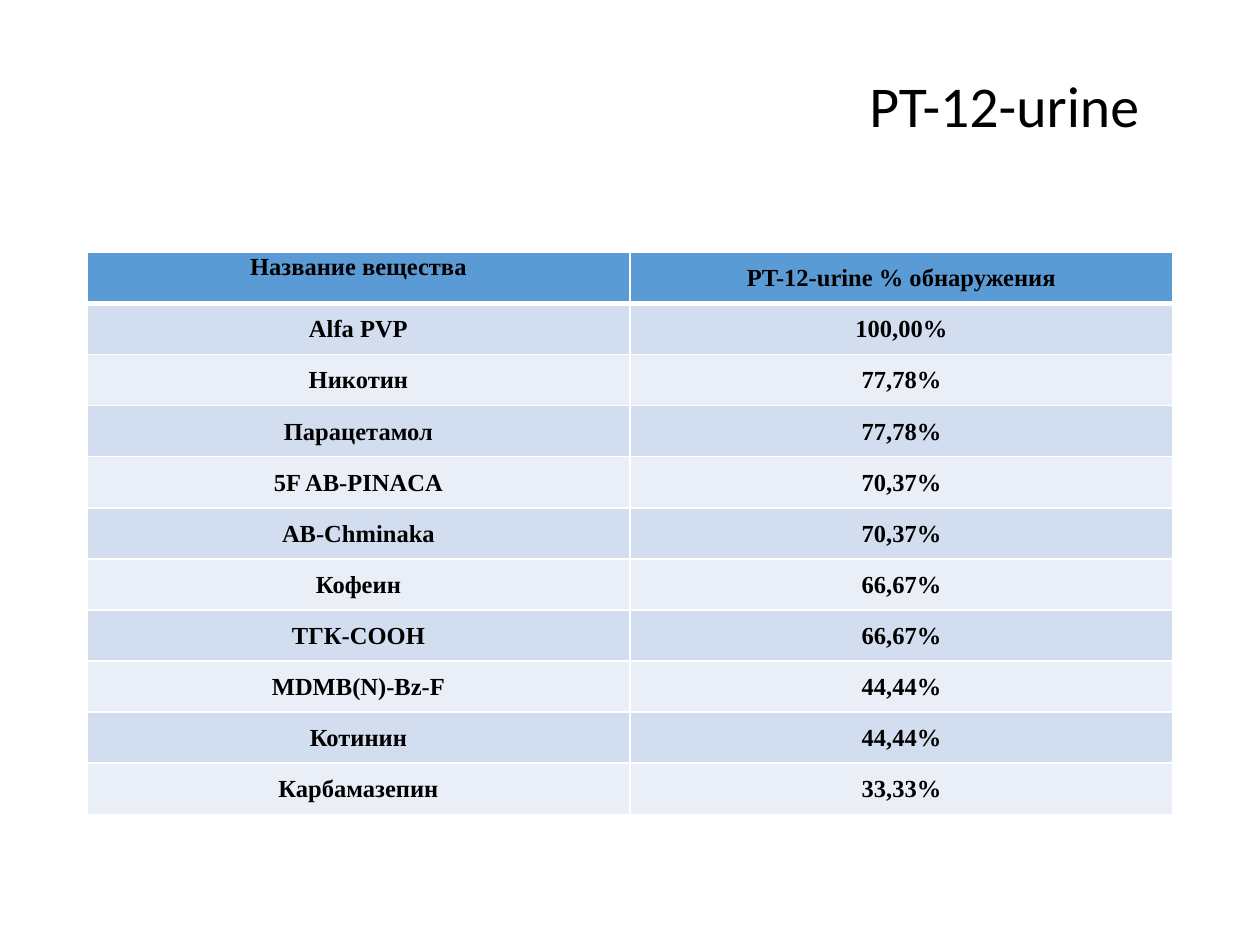
from lxml import etree
from pptx import Presentation
from pptx.dml.color import RGBColor
from pptx.enum.text import MSO_ANCHOR, PP_ALIGN
from pptx.oxml.ns import qn
from pptx.util import Inches, Pt

TOP, MIDDLE = MSO_ANCHOR.TOP, MSO_ANCHOR.MIDDLE
CENTER, RIGHT = PP_ALIGN.CENTER, PP_ALIGN.RIGHT

BLACK = RGBColor(0x00, 0x00, 0x00)
WHITE = RGBColor(0xFF, 0xFF, 0xFF)
BLUE = RGBColor(0x5B, 0x9B, 0xD5)
BANDS = RGBColor(0xEA, 0xEF, 0xF7), RGBColor(0xD2, 0xDE, 0xEF)

ROWS = [
    ("Название вещества", "PT-12-urine % обнаружения"),
    ("Alfa PVP", "100,00%"),
    ("Никотин", "77,78%"),
    ("Парацетамол", "77,78%"),
    ("5F AB-PINACA", "70,37%"),
    ("AB-Chminaka", "70,37%"),
    ("Кофеин", "66,67%"),
    ("ТГК-COOH", "66,67%"),
    ("MDMB(N)-Bz-F", "44,44%"),
    ("Котинин", "44,44%"),
    ("Карбамазепин", "33,33%"),
]


def write(frame, text, font="Calibri", size=14, bold=False, color=BLACK,
          align=CENTER, space=1.0):
    line = frame.paragraphs[0]
    line.alignment = align
    line.line_spacing = space
    run = line.add_run()
    run.text = text
    run.font.name = font
    run.font.size = Pt(size)
    run.font.bold = bold
    run.font.color.rgb = color


class Sheet:
    head, body = "Calibri", "Times New Roman"

    def __init__(self, deck):
        self.wide, self.high = deck.slide_width, deck.slide_height
        self.slide = deck.slides.add_slide(deck.slide_layouts[6])

    def place(self, left, top, width, height):
        return (int(left * self.wide), int(top * self.high),
                int(width * self.wide), int(height * self.high))

    def title(self, text, *area):
        frame = self.slide.shapes.add_textbox(*self.place(*area)).text_frame
        frame.word_wrap = True
        frame.vertical_anchor = MIDDLE
        write(frame, text, font=self.head, size=33, align=RIGHT, space=0.9)

    def border(self, cell, **sides):
        props = cell._tc.get_or_add_tcPr()
        for side, width in sides.items():
            line = etree.SubElement(props, qn(f"a:ln{side}"), w=str(Pt(width)))
            fill = etree.SubElement(line, qn("a:solidFill"))
            etree.SubElement(fill, qn("a:srgbClr"), val=str(WHITE))

    def cell(self, cell, text, row, col):
        cell.margin_left = cell.margin_right = cell.margin_top = Inches(0.01)
        cell.margin_bottom = 0
        cell.vertical_anchor = TOP if row == col == 0 else MIDDLE
        self.border(cell, L=1, R=1, T=3 if row == 1 else 1,
                    B=3 if row == 0 else 1)
        cell.fill.solid()
        cell.fill.fore_color.rgb = BANDS[row % 2] if row else BLUE
        write(cell.text_frame, text, font=self.body, bold=True)

    def table(self, rows, *area):
        grid = self.slide.shapes.add_table(
            len(rows), len(rows[0]), *self.place(*area)).table
        for row, texts in enumerate(rows):
            for col, text in enumerate(texts):
                self.cell(grid.cell(row, col), text, row, col)


def main():
    deck = Presentation()
    deck.slide_width, deck.slide_height = Inches(10), Inches(7.5)
    sheet = Sheet(deck)
    sheet.title("PT-12-urine", 0.085, 0.056, 0.829, 0.119)
    sheet.table(ROWS, 0.069, 0.267, 0.862, 0.595)
    deck.save("out.pptx")


if __name__ == "__main__":
    main()
